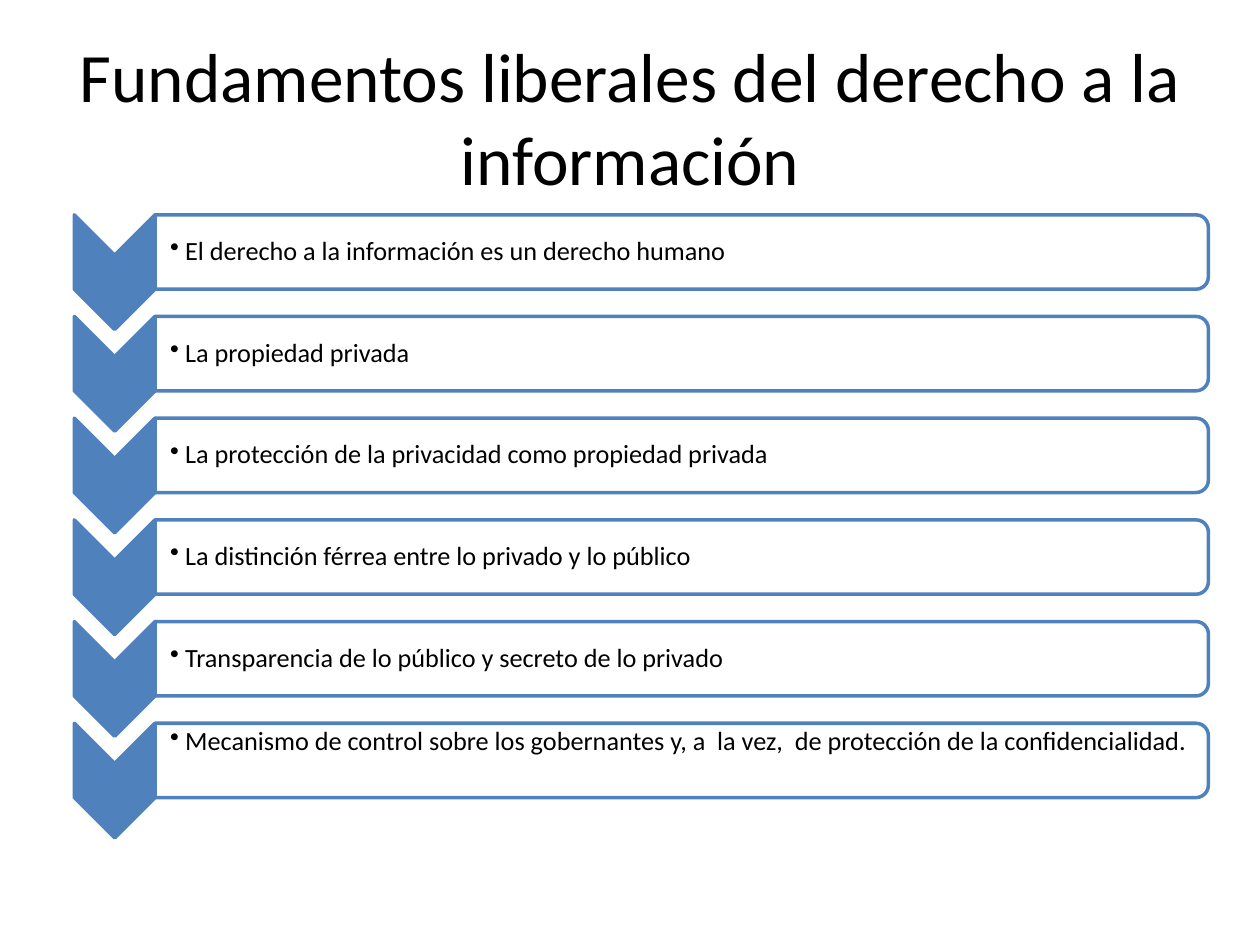
from dataclasses import dataclass

from lxml import etree
from pptx import Presentation
from pptx.dml.color import RGBColor
from pptx.enum import shapes, text
from pptx.oxml.ns import qn
from pptx.util import Inches, Pt

TITLE = "Fundamentos liberales del derecho a la información"
PRINCIPLES = [
    "El derecho a la información es un derecho humano",
    "La propiedad privada",
    "La protección de la privacidad como propiedad privada",
    "La distinción férrea entre lo privado y lo público",
    "Transparencia de lo público y secreto de lo privado",
    "Mecanismo de control sobre los gobernantes y, a  la vez,  de protección de la confidencialidad.",
]


@dataclass(frozen=True)
class Theme:
    font: str = "Calibri"
    title_size: float = 39.6
    body_size: float = 15
    ink: RGBColor = RGBColor(0, 0, 0)
    accent: RGBColor = RGBColor(0x4F, 0x81, 0xBD)
    paper: RGBColor = RGBColor(0xFF, 0xFF, 0xFF)
    line_width: float = 2


THEME = Theme()
FIRST_CENTER, PITCH = 2.0, 0.807
CHEVRON_CENTER, CHEVRON_LENGTH, CHEVRON_WIDTH = 0.91, 0.91, 0.64
CHEVRON_DROP = 0.16
BAR_LEFT, BAR_WIDTH, BAR_HEIGHT = 1.23, 8.36, 0.59
LABEL_WIDTH, LABEL_HEIGHT = 8.33, 0.54
BULLET_INDENT, EDGE_INSET = 0.12, 0.01


def style_text(paragraph, size):
    for run in paragraph.runs:
        run.font.name = THEME.font
        run.font.size = Pt(size)
        run.font.color.rgb = THEME.ink


def add_turned_shape(slide, kind, center_x, center_y, length, breadth, fill):
    """Add a preset shape turned a quarter clockwise about its centre."""
    shape = slide.shapes.add_shape(
        kind, Inches(center_x - length / 2), Inches(center_y - breadth / 2),
        Inches(length), Inches(breadth))
    shape.rotation = 90
    shape.shadow.inherit = False
    shape.fill.solid()
    shape.fill.fore_color.rgb = fill
    shape.line.color.rgb = THEME.accent
    shape.line.width = Pt(THEME.line_width)
    return shape


def make_translucent(shape, percent):
    color = shape.fill._xPr.find(qn("a:solidFill"))[0]
    etree.SubElement(color, qn("a:alpha"), val=str(percent * 1000))


def add_bullet(paragraph):
    properties = paragraph._p.get_or_add_pPr()
    properties.set("marL", str(Inches(BULLET_INDENT)))
    properties.set("indent", str(-Inches(BULLET_INDENT)))
    etree.SubElement(properties, qn("a:buChar"), char="•")


def add_label(slide, words, center_y, anchor):
    label = slide.shapes.add_textbox(
        Inches(BAR_LEFT), Inches(center_y - LABEL_HEIGHT / 2),
        Inches(LABEL_WIDTH), Inches(LABEL_HEIGHT))
    frame = label.text_frame
    frame.word_wrap = True
    frame.vertical_anchor = anchor
    frame.margin_left = Inches(BULLET_INDENT)
    frame.margin_top = frame.margin_right = frame.margin_bottom = Inches(EDGE_INSET)
    frame.text = words
    paragraph = frame.paragraphs[0]
    paragraph.line_spacing = 0.9
    add_bullet(paragraph)
    style_text(paragraph, THEME.body_size)


def add_title(slide):
    title = slide.shapes.title
    title.left, title.top = Inches(0.5), Inches(0.3)
    title.width, title.height = Inches(9), Inches(1.25)
    frame = title.text_frame
    frame.text = TITLE
    frame.vertical_anchor = text.MSO_ANCHOR.MIDDLE
    frame.paragraphs[0].alignment = text.PP_ALIGN.CENTER
    style_text(frame.paragraphs[0], THEME.title_size)


def add_principle(slide, index, words):
    center_y = FIRST_CENTER + index * PITCH
    add_turned_shape(slide, shapes.MSO_SHAPE.CHEVRON, CHEVRON_CENTER,
                     center_y + CHEVRON_DROP, CHEVRON_LENGTH, CHEVRON_WIDTH,
                     THEME.accent)
    bar = add_turned_shape(slide, shapes.MSO_SHAPE.ROUND_2_SAME_RECTANGLE,
                           BAR_LEFT + BAR_WIDTH / 2, center_y,
                           BAR_HEIGHT, BAR_WIDTH, THEME.paper)
    make_translucent(bar, 90)
    is_last = index == len(PRINCIPLES) - 1
    anchor = text.MSO_ANCHOR.TOP if is_last else text.MSO_ANCHOR.MIDDLE
    add_label(slide, words, center_y, anchor)


def main():
    presentation = Presentation()
    presentation.slide_width, presentation.slide_height = Inches(10), Inches(7.5)
    slide = presentation.slides.add_slide(presentation.slide_layouts[5])
    add_title(slide)
    for index, words in enumerate(PRINCIPLES):
        add_principle(slide, index, words)
    presentation.save("out.pptx")


if __name__ == "__main__":
    main()
